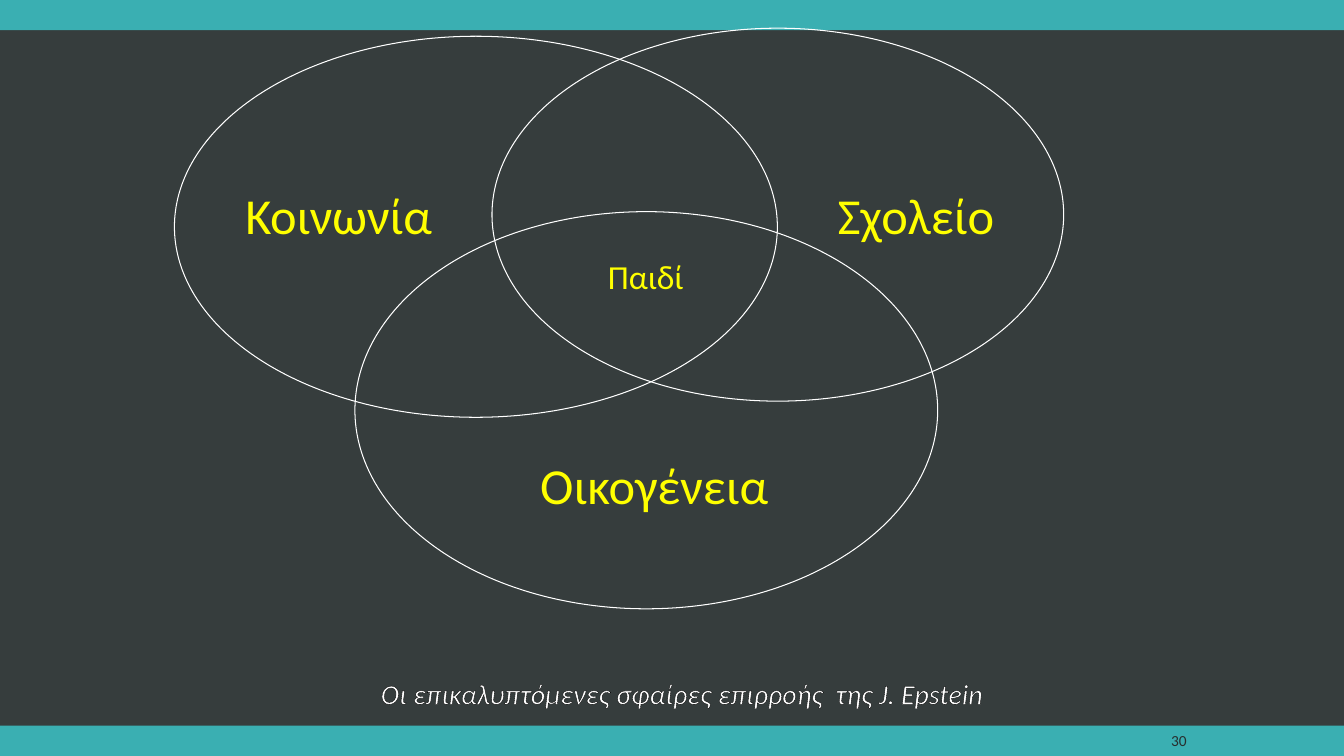
"""Build the slide on overlapping spheres of influence."""
from dataclasses import dataclass

from lxml.etree import SubElement
from pptx import Presentation
from pptx.dml.color import RGBColor
from pptx.enum.shapes import MSO_SHAPE
from pptx.enum.text import MSO_ANCHOR, PP_ALIGN
from pptx.oxml.ns import qn
from pptx.util import Inches, Pt

SLIDE_WIDTH, SLIDE_HEIGHT, BAND_HEIGHT = 13.33, 7.5, 0.3

SPHERES = [
    (1.73, 0.36, 5.98, 3.78),
    (4.88, 0.28, 5.67, 3.7),
    (3.52, 2.1, 5.78, 3.94),
]
SPHERE_LABELS = [
    ("Σχολείο", (7.93, 1.78, 2.31, 0.57)),
    ("Οικογένεια", (4.99, 4.46, 3, 0.57)),
    ("Κοινωνία", (2.05, 1.78, 2.62, 0.49)),
]
CHILD = ("Παιδί", (5.41, 2.49, 1.99, 0.38))
CAPTION = ("Οι επικαλυπτόμενες σφαίρες επιρροής  της J. Epstein", (1.42, 6.66, 10.69, 0.4))
PAGE_NUMBER = ("30", (11.17, 7.22, 0.7, 0.26))


@dataclass(frozen=True)
class Theme:
    """Colours, type sizes and font of the slide."""
    background: str = "363D3D"
    band: str = "3AAFB2"
    line: str = "FFFFFF"
    label: str = "FFFF00"
    caption: str = "FFFFFF"
    caption_outline: str = "000000"
    number: str = "282E2E"
    font: str = "Calibri"
    label_size: int = 36
    child_size: int = 24
    caption_size: int = 20
    number_size: int = 11
    line_width: float = 0.75


THEME = Theme()


def colour(code):
    """Turn a hex code into a colour."""
    return RGBColor.from_string(code)


def add_figure(slide, preset, box, fill=None, line=None):
    """Add a preset shape with an optional fill and line."""
    figure = slide.shapes.add_shape(preset, *map(Inches, box))
    figure.shadow.inherit = False
    if fill:
        figure.fill.solid()
        figure.fill.fore_color.rgb = colour(fill)
    else:
        figure.fill.background()
    if line:
        figure.line.color.rgb = colour(line)
        figure.line.width = Pt(THEME.line_width)
    else:
        figure.line.fill.background()


def add_label(slide, label, size, ink, align=PP_ALIGN.CENTER, anchor=MSO_ANCHOR.TOP):
    """Add one line of text and return its paragraph."""
    wording, box = label
    frame = slide.shapes.add_textbox(*map(Inches, box)).text_frame
    frame.word_wrap = False
    frame.vertical_anchor = anchor
    paragraph = frame.paragraphs[0]
    paragraph.text = wording
    paragraph.alignment = align
    paragraph.font.name = THEME.font
    paragraph.font.size = Pt(size)
    paragraph.font.color.rgb = colour(ink)
    return paragraph


def outline_text(run, ink):
    """Draw a thin outline around the letters of a run."""
    properties = run._r.get_or_add_rPr()
    outline = SubElement(properties, qn("a:ln"), w=str(Pt(THEME.line_width)))
    properties.insert(0, outline)
    SubElement(SubElement(outline, qn("a:solidFill")), qn("a:srgbClr"), val=ink)


def main():
    """Lay out the bands, spheres and labels and save the slide."""
    deck = Presentation()
    deck.slide_width, deck.slide_height = Inches(SLIDE_WIDTH), Inches(SLIDE_HEIGHT)
    slide = deck.slides.add_slide(deck.slide_layouts[6])
    slide.background.fill.solid()
    slide.background.fill.fore_color.rgb = colour(THEME.background)

    for top in (SLIDE_HEIGHT - BAND_HEIGHT, 0):
        add_figure(slide, MSO_SHAPE.RECTANGLE, (0, top, SLIDE_WIDTH, BAND_HEIGHT), fill=THEME.band)
    add_label(slide, PAGE_NUMBER, THEME.number_size, THEME.number, PP_ALIGN.RIGHT, MSO_ANCHOR.MIDDLE)

    for sphere in SPHERES:
        add_figure(slide, MSO_SHAPE.OVAL, sphere, line=THEME.line)
    for label in SPHERE_LABELS:
        add_label(slide, label, THEME.label_size, THEME.label)
    add_label(slide, CHILD, THEME.child_size, THEME.label)

    caption = add_label(slide, CAPTION, THEME.caption_size, THEME.caption)
    caption.font.italic = True
    outline_text(caption.runs[0], THEME.caption_outline)

    deck.save("out.pptx")


if __name__ == "__main__":
    main()
